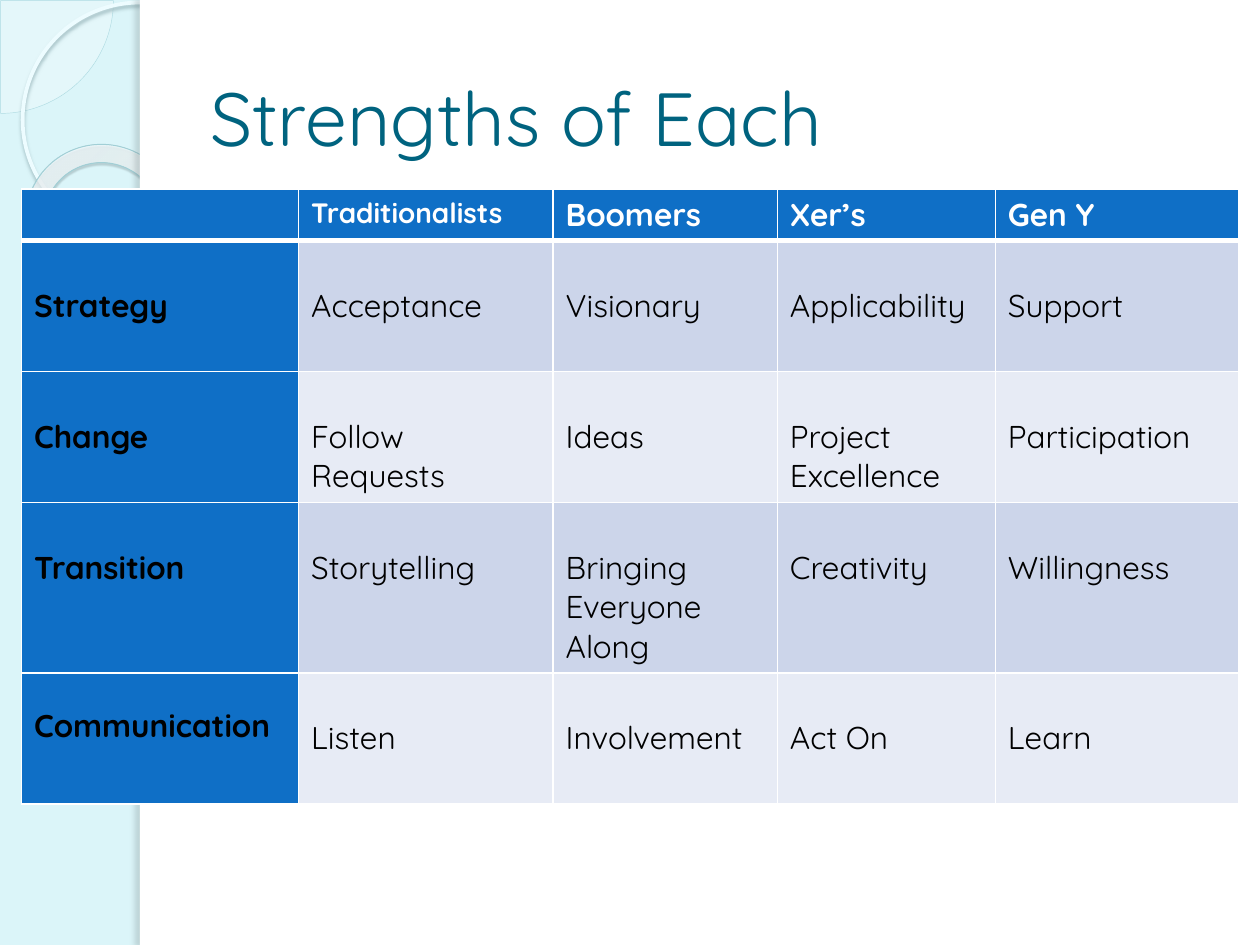
from typing import NamedTuple, Optional

from lxml.etree import SubElement
from pptx import Presentation
from pptx.dml.color import RGBColor
from pptx.enum.shapes import MSO_SHAPE
from pptx.enum.text import MSO_ANCHOR
from pptx.oxml import parse_xml
from pptx.oxml.ns import nsdecls, qn
from pptx.util import Inches, Pt

FONT = "Quicksand"
WHITE = RGBColor(0xFF, 0xFF, 0xFF)
BLACK = RGBColor(0x00, 0x00, 0x00)
PALE_AQUA = RGBColor(0xDB, 0xF5, 0xF9)
PIE_FILL = RGBColor(0xF8, 0xFE, 0xFF)
PIE_EDGE = RGBColor(0xAF, 0xDB, 0xE2)
RING_EDGE = RGBColor(0xED, 0xFC, 0xFF)
DONUT_EDGE = RGBColor(0xA1, 0xCF, 0xD6)
TITLE_TEAL = RGBColor(0x00, 0x63, 0x7F)
BLUE = RGBColor(0x0F, 0x6F, 0xC6)
BANDS = (RGBColor(0xCC, 0xD5, 0xEA), RGBColor(0xE7, 0xEB, 0xF5))

COLUMN_WIDTHS = (2.2, 2.02, 1.78, 1.73, 1.93)
HEADER_HEIGHT = 0.41
GENERATIONS = ("", "Traditionalists", "Boomers", "Xer’s", "Gen Y")
TEXT_DROP = 0.36


class Shadow(NamedTuple):
    color: RGBColor
    opacity: int
    blur: float
    distance: float
    angle: int


class Decoration(NamedTuple):
    preset: MSO_SHAPE
    box: tuple[float, float, float, float]
    fill: Optional[RGBColor] = None
    opacity: int = 100
    edge: Optional[RGBColor] = None
    edge_width: float = 0
    shadow: Optional[Shadow] = None
    adjustments: tuple[float, ...] = ()
    rotation: float = 0


class StrengthRow(NamedTuple):
    topic: str
    strengths: tuple[str, str, str, str]
    height: float = 1.04
    topic_drop: float = TEXT_DROP


PIE = Decoration(MSO_SHAPE.PIE, (-0.89, -0.89, 1.79, 1.79), PIE_FILL, 33,
                 PIE_EDGE, 0.25, adjustments=(0, 54.02))
RING = Decoration(MSO_SHAPE.OVAL, (0.18, 0.02, 1.86, 1.86), edge=RING_EDGE, edge_width=2.15,
                  shadow=Shadow(RGBColor(0x9C, 0xB9, 0xBE), 85, 2, 2, 90))
DONUT = Decoration(MSO_SHAPE.DONUT, (0.2, 1.15, 1.23, 1.21), edge=DONUT_EDGE, edge_width=0.58,
                   shadow=Shadow(RGBColor(0x4B, 0x5E, 0x61), 35, 1, 1.2, 75),
                   adjustments=(0.12,), rotation=38.6)
PAGE = Decoration(MSO_SHAPE.RECTANGLE, (1.11, 0, 8.89, 7.5), WHITE)
PAGE_EDGE = Decoration(MSO_SHAPE.RECTANGLE, (1.11, 0, 0.08, 7.5), WHITE,
                       shadow=Shadow(RGBColor(0x6C, 0x7A, 0x7C), 25, 3, 3, 180))
DONUT_STOPS = ((0, "F9FEFF", 70), (70, "FDFFFF", 55), (100, "9EF2FF", 60))

STRENGTH_ROWS = (
    StrengthRow("Strategy", ("Acceptance", "Visionary", "Applicability", "Support")),
    StrengthRow("Change", ("Follow Requests", "Ideas", "Project Excellence", "Participation")),
    StrengthRow("Transition", ("Storytelling", "Bringing Everyone Along", "Creativity",
                               "Willingness"), height=1.35),
    StrengthRow("Communication", ("Listen", "Involvement", "Act On", "Learn"), topic_drop=0.26),
)


def add_color(parent, color: RGBColor, opacity: int) -> None:
    srgb = SubElement(parent, qn("a:srgbClr"), val=str(color))
    SubElement(srgb, qn("a:alpha"), val=str(opacity * 1000))


def add_shadow(shape, shadow: Shadow) -> None:
    effects = shape._element.spPr.find(qn("a:effectLst"))
    outer = SubElement(effects, qn("a:outerShdw"), blurRad=str(Pt(shadow.blur)),
                       dist=str(Pt(shadow.distance)), dir=str(shadow.angle * 60000),
                       algn="tl", rotWithShape="0")
    add_color(outer, shadow.color, shadow.opacity)


def draw_decoration(slide, part: Decoration):
    shape = slide.shapes.add_shape(part.preset, *map(Inches, part.box))
    shape.rotation = part.rotation
    for index, value in enumerate(part.adjustments):
        shape.adjustments[index] = value
    if part.fill is None:
        shape.fill.background()
    else:
        shape.fill.solid()
        shape.fill.fore_color.rgb = part.fill
        if part.opacity < 100:
            srgb = shape._element.spPr.find(qn("a:solidFill")).find(qn("a:srgbClr"))
            SubElement(srgb, qn("a:alpha"), val=str(part.opacity * 1000))
    if part.edge is None:
        shape.line.fill.background()
    else:
        shape.line.color.rgb = part.edge
        shape.line.width = Pt(part.edge_width)
    shape.shadow.inherit = False
    if part.shadow:
        add_shadow(shape, part.shadow)
    return shape


def fill_with_glow(shape) -> None:
    """Give the shape a translucent circular gradient centred far outside it."""
    gradient = parse_xml(f'<a:gradFill {nsdecls("a")} rotWithShape="1"><a:gsLst/>'
                         '<a:path path="circle"><a:fillToRect l="-408000" t="-50000" '
                         'r="508000" b="150000"/></a:path></a:gradFill>')
    for position, color, opacity in DONUT_STOPS:
        stop = SubElement(gradient.find(qn("a:gsLst")), qn("a:gs"), pos=str(position * 1000))
        add_color(stop, RGBColor.from_string(color), opacity)
    properties = shape._element.spPr
    properties.replace(properties.find(qn("a:noFill")), gradient)


def style_text(paragraph, size: float, color: RGBColor, bold: bool = False) -> None:
    font = paragraph.font
    font.name, font.size, font.bold = FONT, Pt(size), bold
    font.color.rgb = color


def add_title(slide) -> None:
    frame = slide.shapes.add_textbox(*map(Inches, (1.57, 0.3, 8.2, 1.25))).text_frame
    frame.word_wrap = True
    frame.vertical_anchor = MSO_ANCHOR.MIDDLE
    frame.text = "Strengths of Each"
    style_text(frame.paragraphs[0], 43, TITLE_TEAL)


def add_borders(cell, top: float = 1, bottom: float = 1) -> None:
    properties = cell._tc.get_or_add_tcPr()
    for index, (side, width) in enumerate(zip("LRTB", (1, 1, top, bottom))):
        border = parse_xml(f'<a:ln{side} {nsdecls("a")} w="{Pt(width)}"><a:solidFill>'
                           f'<a:srgbClr val="{WHITE}"/></a:solidFill></a:ln{side}>')
        properties.insert(index, border)


def fill_cell(cell, text: str, fill: RGBColor, color: RGBColor, size: float = 18,
              bold: bool = False, drop: float = 0.05) -> None:
    cell.fill.solid()
    cell.fill.fore_color.rgb = fill
    cell.margin_top = Inches(drop)
    cell.text = text
    style_text(cell.text_frame.paragraphs[0], size, color, bold)


def add_strengths_table(slide) -> None:
    heights = (HEADER_HEIGHT, *(row.height for row in STRENGTH_ROWS))
    table = slide.shapes.add_table(
        len(heights), len(COLUMN_WIDTHS), Inches(0.17), Inches(1.5),
        Inches(sum(COLUMN_WIDTHS)), Inches(sum(heights))).table
    for column, width in zip(table.columns, COLUMN_WIDTHS):
        column.width = Inches(width)
    for table_row, height in zip(table.rows, heights):
        table_row.height = Inches(height)

    for column, generation in enumerate(GENERATIONS):
        cell = table.cell(0, column)
        size = 16 if generation == "Traditionalists" else 18
        fill_cell(cell, generation, BLUE, WHITE, size, bold=True)
        add_borders(cell, bottom=3)
    for index, row in enumerate(STRENGTH_ROWS, start=1):
        fill_cell(table.cell(index, 0), row.topic, BLUE, BLACK, bold=True, drop=row.topic_drop)
        for column, strength in enumerate(row.strengths, start=1):
            fill_cell(table.cell(index, column), strength, BANDS[(index - 1) % 2], BLACK,
                      drop=TEXT_DROP)
        for column in range(len(COLUMN_WIDTHS)):
            add_borders(table.cell(index, column), top=3 if index == 1 else 1)


def main() -> None:
    deck = Presentation()
    deck.slide_width, deck.slide_height = Inches(10), Inches(7.5)
    slide = deck.slides.add_slide(deck.slide_layouts[6])
    slide.background.fill.solid()
    slide.background.fill.fore_color.rgb = PALE_AQUA
    for part in (PIE, RING, DONUT, PAGE, PAGE_EDGE):
        shape = draw_decoration(slide, part)
        if part is DONUT:
            fill_with_glow(shape)
    add_title(slide)
    add_strengths_table(slide)
    deck.save("out.pptx")


if __name__ == "__main__":
    main()
